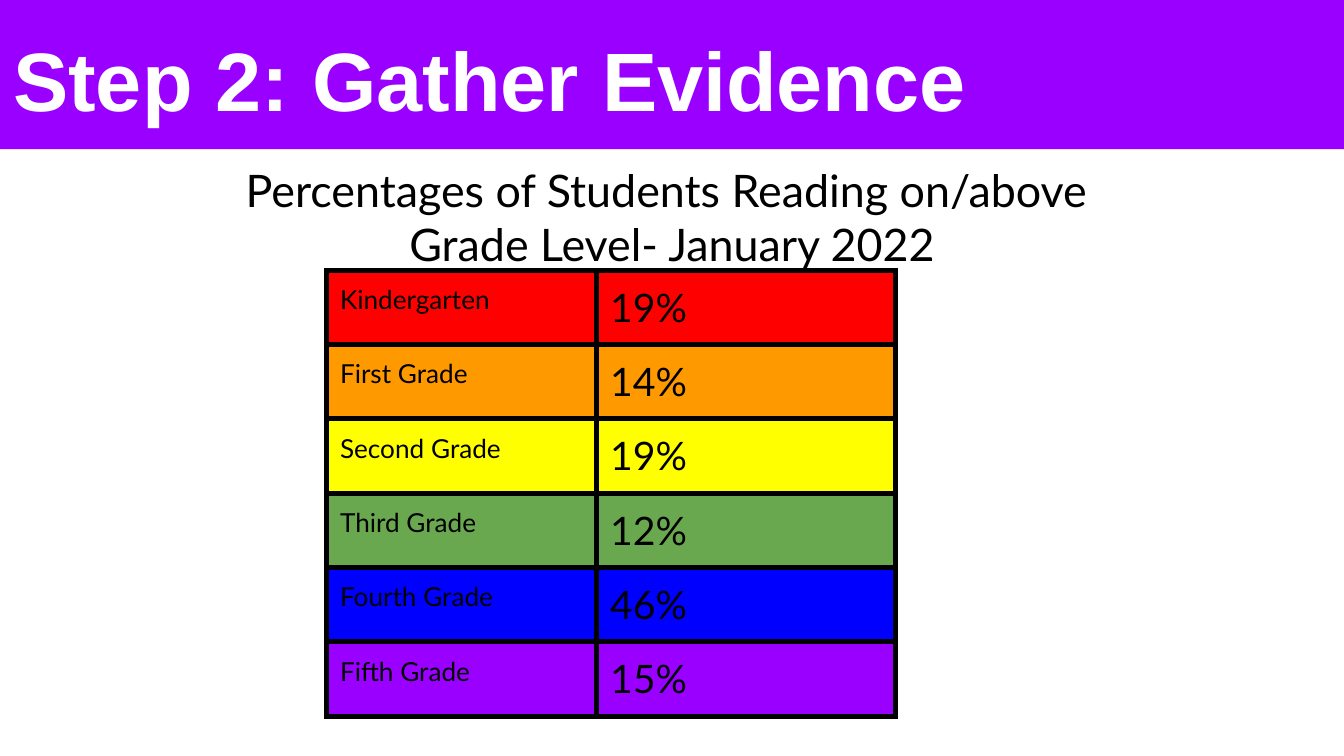
from dataclasses import dataclass

from lxml.etree import SubElement
from pptx import Presentation
from pptx.dml.color import RGBColor as RGB
from pptx.enum.shapes import MSO_SHAPE as Shape
from pptx.enum.text import MSO_ANCHOR as Anchor, PP_ALIGN as Align
from pptx.oxml.ns import qn
from pptx.util import Inches, Pt


@dataclass(frozen=True)
class Theme:
    purple: str = "9900FF"
    white: str = "FFFFFF"
    black: str = "000000"
    head: str = "Arial"
    body: str = "Lato"
    title: float = 44.4
    lead: float = 24
    label: float = 14
    value: float = 21
    border: float = 3
    inset: float = 0.1


THEME = Theme()
GRADES = [
    ("Kindergarten", "19%", "FF0000"),
    ("First Grade", "14%", "FF9900"),
    ("Second Grade", "19%", "FFFF00"),
    ("Third Grade", "12%", "6AA84F"),
    ("Fourth Grade", "46%", "0000FF"),
    ("Fifth Grade", "15%", THEME.purple),
]


def paint(item, color):
    item.fill.solid()
    item.fill.fore_color.rgb = RGB.from_string(color)


def pad(item):
    """Give a cell or text frame the same inset on every side."""
    gap = Inches(THEME.inset)
    item.margin_left = item.margin_right = gap
    item.margin_top = item.margin_bottom = gap


def style(frame, size, face, color, bold=False):
    for para in frame.paragraphs:
        for run in para.runs:
            font = run.font
            font.size, font.name, font.bold = Pt(size), face, bold
            font.color.rgb = RGB.from_string(color)


def edge(cell):
    """Draw a solid border on all four sides of a cell."""
    props = cell._tc.get_or_add_tcPr()
    for spot, side in enumerate(("lnL", "lnR", "lnT", "lnB")):
        line = SubElement(props, qn(f"a:{side}"), w=str(Pt(THEME.border)))
        fill = SubElement(line, qn("a:solidFill"))
        SubElement(fill, qn("a:srgbClr"), val=THEME.black)
        props.insert(spot, line)


def add_banner(slide, text):
    bar = slide.shapes.add_shape(Shape.RECTANGLE, 0, 0, Inches(10), Inches(1.11))
    bar.shadow.inherit = False
    paint(bar, THEME.purple)
    bar.line.fill.background()
    frame = bar.text_frame
    frame.text = text
    frame.vertical_anchor = Anchor.TOP
    frame.paragraphs[0].alignment = Align.LEFT
    frame.paragraphs[0].line_spacing = 1.15
    pad(frame)
    style(frame, THEME.title, THEME.head, THEME.white, bold=True)


def add_grid(slide, rows):
    widths = (2.01, 2.22)
    grid = slide.shapes.add_table(
        len(rows), len(widths), Inches(2.43), Inches(2.01),
        Inches(sum(widths)), Inches(3.32)).table
    for col, width in zip(grid.columns, widths):
        col.width = Inches(width)
    for row, (label, value, color) in zip(grid.rows, rows):
        parts = ((label, THEME.label), (value, THEME.value))
        for cell, (text, size) in zip(row.cells, parts):
            cell.text = text
            pad(cell)
            paint(cell, color)
            edge(cell)
            style(cell.text_frame, size, THEME.body, THEME.black)


def add_lead(slide, text):
    box = slide.shapes.add_textbox(
        Inches(0.3), Inches(1.11), Inches(9.4), Inches(1.41))
    frame = box.text_frame
    frame.word_wrap = True
    frame.text = text
    pad(frame)
    for para in frame.paragraphs:
        para.alignment = Align.CENTER
    style(frame, THEME.lead, THEME.body, THEME.black)


def main():
    deck = Presentation()
    deck.slide_width = Inches(10)
    deck.slide_height = deck.slide_width * 9 // 16
    slide = deck.slides.add_slide(deck.slide_layouts[6])
    add_banner(slide, "Step 2: Gather Evidence")
    add_grid(slide, GRADES)
    add_lead(slide, "Percentages of Students Reading on/above \n"
                    "Grade Level- January 2022")
    deck.save("out.pptx")


if __name__ == "__main__":
    main()
